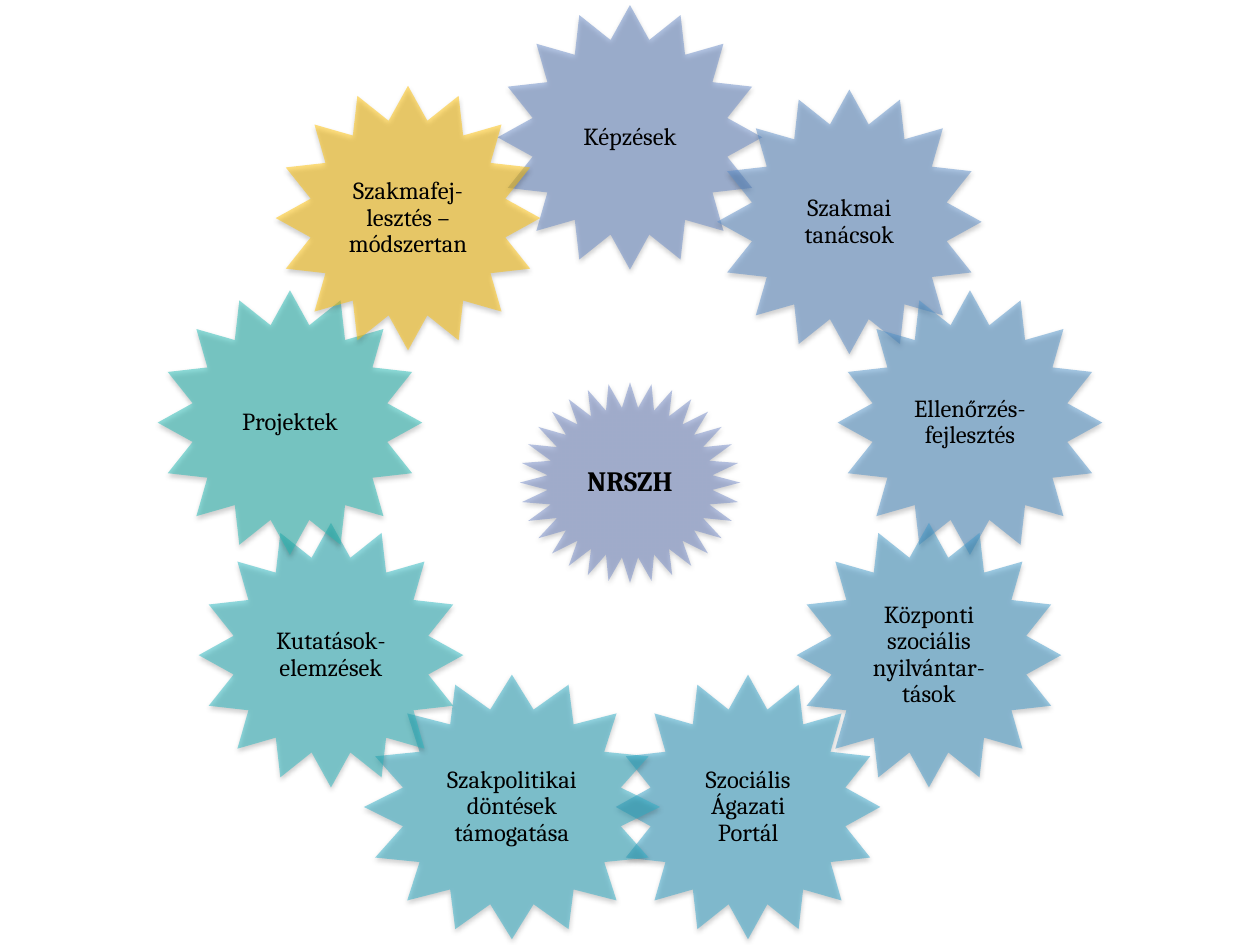
import math

import pptx
import pptx.dml.color
import pptx.enum.shapes
import pptx.enum.text
import pptx.oxml
import pptx.util
from pptx.util import Inches

STARS = pptx.enum.shapes.MSO_SHAPE

THEME = {
    "font": "Cambria",
    "text": "000000",
    "hub": "738AC8",
    "hub_size": 16,
    "label_size": 14,
    "opacity": 50,
    "shadow_opacity": 38,
}

HUB = "NRSZH"
# label, fill, star width, nudge off the ring; clockwise from the top
RING = [
    ("Képzések", "678AC8", 2.1, (0, 0)),
    ("Szakmai tanácsok", "5A8DC9", 2.1, (-0.02, 0.03)),
    ("Ellenőrzés-fejlesztés", "4D92CA", 2.1, (0, 0)),
    ("Központi szociális nyilvántar-tások", "3F9ACB", 2.1, (0, 0)),
    ("Szociális Ágazati Portál", "32A5CC", 2.1, (0, 0)),
    ("Szakpolitikai döntések támogatása", "2BAEC7", 2.35, (0, 0)),
    ("Kutatások-elemzések", "25B7C0", 2.1, (0, 0)),
    ("Projektek", "1FBAB4", 2.1, (0, 0)),
    ("Szakmafej-lesztés – módszertan", "FFC000", 2.1, (0, 0)),
]

CENTRE = (5, 3.83)
RADIUS = 2.74
HUB_SIZE = (1.75, 1.59)
STAR_HEIGHT = 2.1
TEXT_SHARE = 0.53  # part of a star's width and height that its label takes

SHADOW = (
    '<a:effectLst xmlns:a="http://schemas.openxmlformats.org/drawingml/2006/main">'
    '<a:outerShdw blurRad="{blur}" dist="{dist}" dir="5400000" rotWithShape="0">'
    '<a:srgbClr val="000000"><a:alpha val="{alpha}"/></a:srgbClr>'
    "</a:outerShdw></a:effectLst>"
)


def rgb(value):
    return pptx.dml.color.RGBColor.from_string(value)


def frame(middle, size):
    """Left, top, width and height of a box around its middle."""
    (x, y), (width, height) = middle, size
    return [Inches(v) for v in (x - width / 2, y - height / 2, width, height)]


def apply(target, values):
    for name, value in values.items():
        setattr(target, name, value)


def add_star(page, kind, middle, size, color):
    star = page.shapes.add_shape(kind, *frame(middle, size))
    star.fill.solid()
    star.fill.fore_color.rgb = rgb(color)
    star.line.fill.background()
    properties = star.element.spPr
    tint = properties.find(".//" + pptx.oxml.ns.qn("a:srgbClr"))
    alpha = pptx.oxml.parse_xml(
        '<a:alpha xmlns:a="http://schemas.openxmlformats.org/drawingml/2006/main"'
        f' val="{THEME["opacity"] * 1000}"/>')
    tint.append(alpha)
    properties.append(pptx.oxml.parse_xml(SHADOW.format(
        blur=pptx.util.Pt(3.1), dist=pptx.util.Pt(1.6),
        alpha=THEME["shadow_opacity"] * 1000)))


def add_label(page, text, middle, star_size, points, bold):
    size = [side * TEXT_SHARE for side in star_size]
    box = page.shapes.add_textbox(*frame(middle, size))
    inset = Inches(0.02)
    apply(box.text_frame, {
        "word_wrap": True,
        "vertical_anchor": pptx.enum.text.MSO_ANCHOR.MIDDLE,
        "margin_left": inset, "margin_right": inset,
        "margin_top": inset, "margin_bottom": inset,
    })
    para = box.text_frame.paragraphs[0]
    apply(para, {"alignment": pptx.enum.text.PP_ALIGN.CENTER, "line_spacing": 0.9})
    span = para.add_run()
    span.text = text
    apply(span.font, {"name": THEME["font"], "size": pptx.util.Pt(points), "bold": bold})
    span.font.color.rgb = rgb(THEME["text"])


def main():
    deck = pptx.Presentation()
    apply(deck, {"slide_width": Inches(10), "slide_height": Inches(7.5)})
    page = deck.slides.add_slide(deck.slide_layouts[6])

    add_star(page, STARS.STAR_32_POINT, CENTRE, HUB_SIZE, THEME["hub"])
    add_label(page, HUB, CENTRE, HUB_SIZE, THEME["hub_size"], True)

    for index, (text, color, width, nudge) in enumerate(RING):
        angle = 2 * math.pi * index / len(RING)
        middle = (CENTRE[0] + RADIUS * math.sin(angle) + nudge[0],
                  CENTRE[1] - RADIUS * math.cos(angle) + nudge[1])
        size = (width, STAR_HEIGHT)
        add_star(page, STARS.STAR_16_POINT, middle, size, color)
        add_label(page, text, middle, size, THEME["label_size"], False)

    deck.save("out.pptx")


if __name__ == "__main__":
    main()
